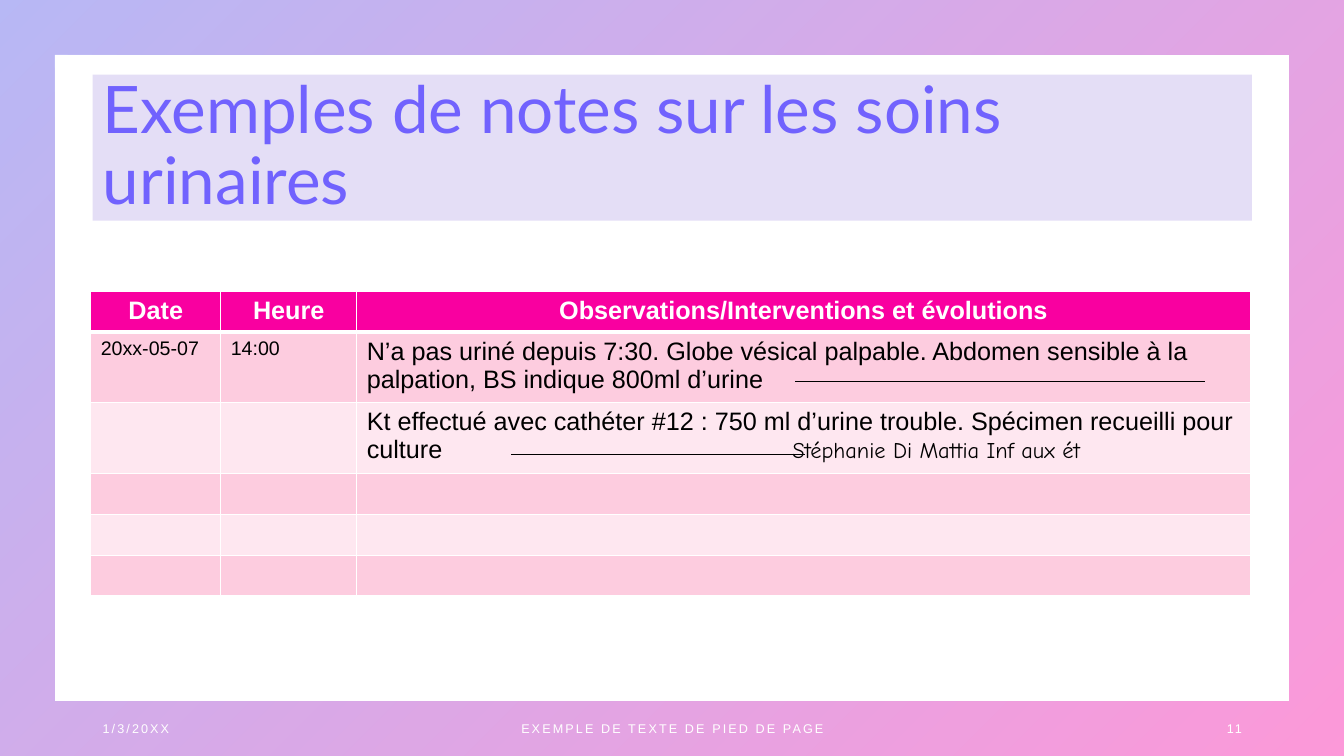
"""Build the slide of sample nursing notes on urinary care."""
from lxml.etree import SubElement
from pptx import Presentation
from pptx.dml.color import RGBColor
from pptx.enum.shapes import MSO_CONNECTOR, MSO_SHAPE
from pptx.enum.text import MSO_ANCHOR, MSO_AUTO_SIZE, PP_ALIGN
from pptx.oxml.ns import qn
from pptx.util import Pt

WHITE = RGBColor(0xFF, 0xFF, 0xFF)
BLACK = RGBColor(0x00, 0x00, 0x00)
INDIGO = RGBColor(0x4D, 0x4E, 0xE6)
VIOLET = RGBColor(0x71, 0x62, 0xFE)
MAGENTA = RGBColor(0xF9, 0x00, 0xA0)
LAVENDER = RGBColor(0xE4, 0xDE, 0xF6)
PINK = RGBColor(0xFD, 0xCC, 0xDF)
PALE_PINK = RGBColor(0xFE, 0xE7, 0xF0)

TITLE = "Exemples de notes sur les soins urinaires"
FOOTERS = [
    ("1/3/20XX", 66.24, 216, PP_ALIGN.LEFT),
    ("EXEMPLE DE TEXTE DE PIED DE PAGE", 318.24, 324, PP_ALIGN.CENTER),
    ("11", 678.24, 216, PP_ALIGN.RIGHT),
]
SIGNATURE = "Stéphanie Di Mattia Inf aux ét"
NOTES = [
    ("Date", "Heure", "Observations/Interventions et évolutions"),
    ("20xx-05-07", "14:00",
     "N’a pas uriné depuis 7:30. Globe vésical palpable. Abdomen sensible à la "
     "palpation, BS indique 800ml d’urine"),
    ("", "", "Kt effectué avec cathéter #12 : 750 ml d’urine trouble. "
     "Spécimen recueilli pour culture\t"),
    ("", "", ""),
    ("", "", ""),
    ("", "", ""),
]
COLUMN_WIDTHS = [92.9, 97.1, 638.4]
ROW_HEIGHTS = [29.2, 29.2, 39.6, 29.2, 29.2, 29.2]
SIGNATURE_TAB = 304
FILLER_LINES = [(568.08, 860.4, 272.16), (365.04, 575.28, 324.72)]

HEADER_FONT = {"name": "Arial", "size": Pt(18), "bold": True}
TIME_FONT = {"name": "Arial", "size": Pt(14), "bold": False}
NOTE_FONT = {"name": "Arial", "size": Pt(18), "bold": False}
SIGNATURE_FONT = {"name": "Comic Neue", "size": Pt(16), "bold": False}
FOOTER_FONT = {"name": "Arial", "size": Pt(9)}
TITLE_FONT = {"name": "Lato", "size": Pt(46.8)}


def apply(target, values):
    for name, value in values.items():
        setattr(target, name, value)


def place(left, top, width, height):
    return {"left": Pt(left), "top": Pt(top), "width": Pt(width), "height": Pt(height)}


def write(paragraph, text, font, color=None):
    run = paragraph.add_run()
    run.text = text
    apply(run.font, font)
    if color is not None:
        run.font.fill.solid()
        run.font.color.rgb = color
    return run


def paint_gradient(shape, fill, stops, angle):
    fill.gradient()
    fill.gradient_angle = angle
    for stop, (color, position, _) in zip(fill.gradient_stops, stops):
        stop.color.rgb = color
        stop.position = position
    for gs, (_, _, opacity) in zip(shape.element.iter(qn("a:gs")), stops):
        if opacity < 100:
            SubElement(gs[0], qn("a:alpha"), val=str(opacity * 1000))


def add_frame(slide):
    frame = slide.shapes.add_shape(MSO_SHAPE.FRAME, 0, 0, Pt(960), Pt(540))
    frame.adjustments[0] = 0.072
    frame.shadow.inherit = False
    frame.line.fill.background()
    paint_gradient(frame, frame.fill, [(INDIGO, 0, 40), (MAGENTA, 1, 40)], 315)


def fill_title(slide):
    title = slide.shapes.title
    apply(title, place(66.24, 53.28, 828, 104.4))
    title.fill.solid()
    title.fill.fore_color.rgb = LAVENDER
    apply(title.text_frame, {"word_wrap": True, "auto_size": MSO_AUTO_SIZE.NONE,
                             "vertical_anchor": MSO_ANCHOR.MIDDLE})
    paragraph = title.text_frame.paragraphs[0]
    apply(paragraph, {"alignment": PP_ALIGN.LEFT, "line_spacing": 0.9})
    heading = write(paragraph, TITLE, TITLE_FONT)
    paint_gradient(title, heading.font.fill, [(VIOLET, 0, 100), (MAGENTA, 1, 70)], 0)


def add_footer(slide, text, left, width, alignment):
    footer = slide.shapes.add_textbox(Pt(left), Pt(506.16), Pt(width), Pt(28.8))
    apply(footer.text_frame, {"word_wrap": True, "vertical_anchor": MSO_ANCHOR.MIDDLE})
    paragraph = footer.text_frame.paragraphs[0]
    paragraph.alignment = alignment
    write(paragraph, text, FOOTER_FONT, WHITE)
    for properties in footer.element.iter(qn("a:rPr")):
        properties.set("spc", "150")


def add_borders(tc, row):
    widths = {"lnL": 1, "lnR": 1, "lnT": 3 if row == 1 else 1, "lnB": 3 if row == 0 else 1}
    for side, width in widths.items():
        border = SubElement(tc.get_or_add_tcPr(), qn(f"a:{side}"), w=str(Pt(width)))
        SubElement(SubElement(border, qn("a:solidFill")), qn("a:srgbClr"), val=str(WHITE))


def add_notes_table(slide):
    grid = slide.shapes.add_table(
        len(NOTES), len(COLUMN_WIDTHS), Pt(64.8), Pt(208.08),
        Pt(sum(COLUMN_WIDTHS)), Pt(sum(ROW_HEIGHTS)))
    notes = grid.table
    for column, width in zip(notes.columns, COLUMN_WIDTHS):
        column.width = Pt(width)
    for row, height in zip(notes.rows, ROW_HEIGHTS):
        row.height = Pt(height)
    for index, tc in enumerate(grid.element.iter(qn("a:tc"))):
        row, column = divmod(index, len(COLUMN_WIDTHS))
        add_borders(tc, row)
        cell = notes.cell(row, column)
        cell.fill.solid()
        cell.fill.fore_color.rgb = MAGENTA if row == 0 else PINK if row % 2 else PALE_PINK
        paragraph = cell.text_frame.paragraphs[0]
        text = NOTES[row][column]
        if row == 0:
            paragraph.alignment = PP_ALIGN.CENTER
            write(paragraph, text, HEADER_FONT, WHITE)
        elif text:
            write(paragraph, text, NOTE_FONT if column == 2 else TIME_FONT, BLACK)
        if text.endswith("\t"):
            write(paragraph, SIGNATURE, SIGNATURE_FONT, BLACK)
            tabs = SubElement(next(tc.iter(qn("a:p"))).get_or_add_pPr(), qn("a:tabLst"))
            SubElement(tabs, qn("a:tab"), pos=str(Pt(SIGNATURE_TAB)), algn="l")


def add_filler_line(slide, start, end, y):
    filler = slide.shapes.add_connector(
        MSO_CONNECTOR.STRAIGHT, Pt(start), Pt(y), Pt(end), Pt(y))
    filler.line.color.rgb = BLACK
    filler.line.width = Pt(0.5)
    SubElement(filler.element.spPr, qn("a:effectLst"))


def main():
    deck = Presentation()
    apply(deck, {"slide_width": Pt(960), "slide_height": Pt(540)})
    slide = deck.slides.add_slide(deck.slide_layouts[5])
    add_frame(slide)
    fill_title(slide)
    for footer in FOOTERS:
        add_footer(slide, *footer)
    add_notes_table(slide)
    for filler in FILLER_LINES:
        add_filler_line(slide, *filler)
    deck.save("out.pptx")


if __name__ == "__main__":
    main()
